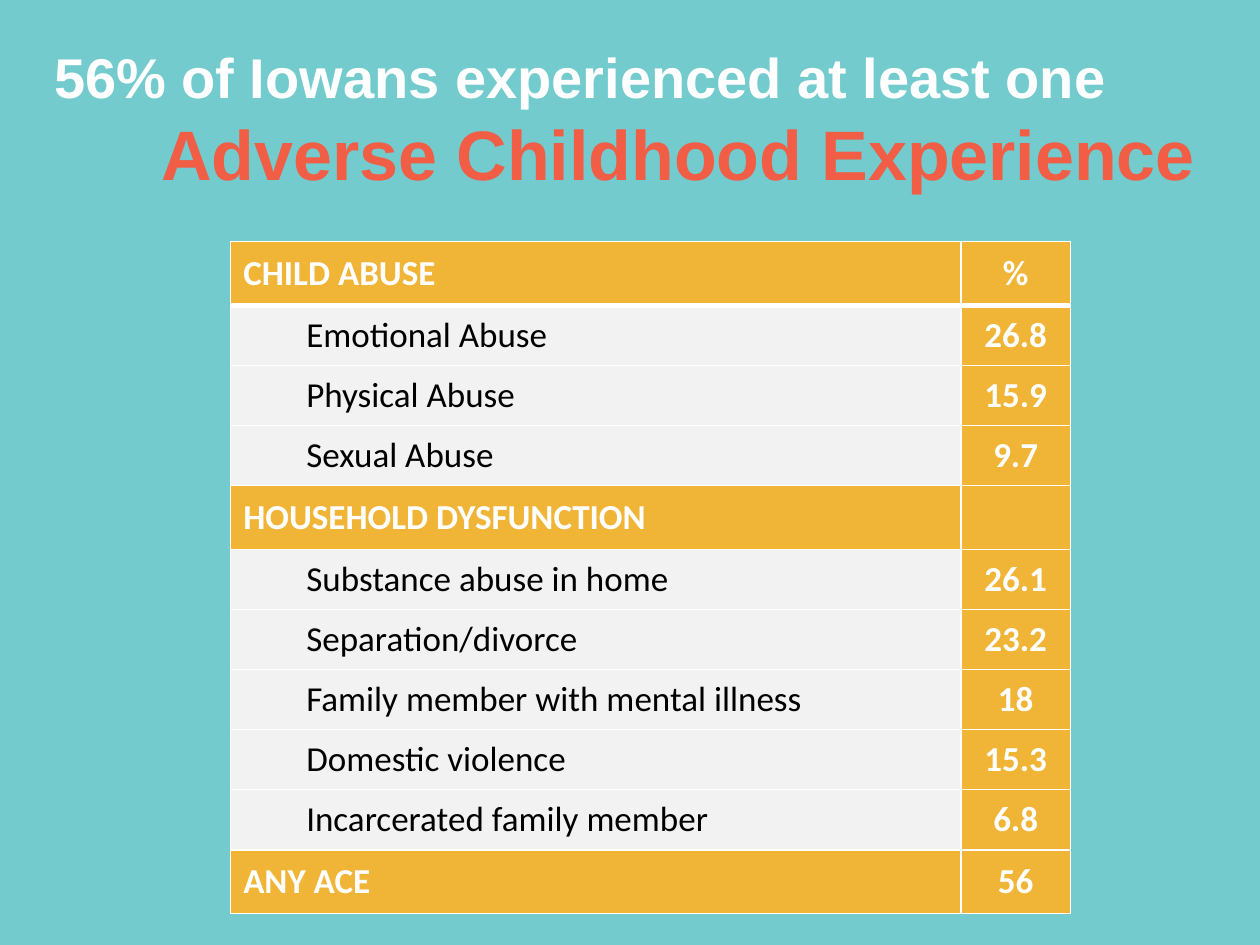
from lxml import etree
from pptx import Presentation
from pptx.dml.color import RGBColor
from pptx.enum.text import MSO_ANCHOR, MSO_AUTO_SIZE, PP_ALIGN
from pptx.oxml.ns import qn
from pptx.util import Cm, Pt

LEFT, CENTER, RIGHT = PP_ALIGN.LEFT, PP_ALIGN.CENTER, PP_ALIGN.RIGHT
MIDDLE = MSO_ANCHOR.MIDDLE

TEAL, CORAL, AMBER = "73CBCD", "F15D45", "F0B537"
WHITE, BLACK, PALE = "FFFFFF", "000000", "F2F2F2"

TITLE = [
    ("56% of Iowans experienced at least one", 32, WHITE, LEFT),
    ("Adverse Childhood Experience", 40, CORAL, RIGHT),
]

# Each group: heading, its value, and the experiences listed under it
GROUPS = [
    ("CHILD ABUSE", "%", [
        ("Emotional Abuse", "26.8"),
        ("Physical Abuse", "15.9"),
        ("Sexual Abuse", "9.7"),
    ]),
    ("HOUSEHOLD DYSFUNCTION", "", [
        ("Substance abuse in home", "26.1"),
        ("Separation/divorce", "23.2"),
        ("Family member with mental illness", "18"),
        ("Domestic violence", "15.3"),
        ("Incarcerated family member", "6.8"),
    ]),
    ("ANY ACE", "56", []),
]
COLUMN_WIDTHS = (14.72, 2.21)
HEADING_HEIGHT, ITEM_HEIGHT = 1.29, 1.21
ITEM_INDENT = 1.27


def color(value):
    return RGBColor.from_string(value)


def write(para, text, font="Calibri", size=20, ink=WHITE, bold=True, align=LEFT, indent=0):
    para.alignment = align
    if indent:
        para.level = 1
        properties = para._p.get_or_add_pPr()
        properties.set("marL", str(Cm(indent)))
        properties.set("indent", "0")
    if text:
        span = para.add_run()
        span.text = text
        style = span.font
    else:
        style = para.font
    style.name, style.size, style.bold = font, Pt(size), bold
    style.color.rgb = color(ink)


def add_borders(cell, bottom=1, top=1):
    properties = cell._tc.get_or_add_tcPr()
    for side, width in (("L", 1), ("R", 1), ("T", top), ("B", bottom)):
        line = etree.SubElement(properties, qn(f"a:ln{side}"), w=str(Pt(width)))
        fill = etree.SubElement(line, qn("a:solidFill"))
        etree.SubElement(fill, qn("a:srgbClr"), val=WHITE)


def add_title(page):
    box = page.shapes.add_textbox(Cm(0.84), Cm(0.74), Cm(23.5), Cm(3.33))
    frame = box.text_frame
    frame.word_wrap = True
    frame.auto_size = MSO_AUTO_SIZE.SHAPE_TO_FIT_TEXT
    for index, (text, size, ink, align) in enumerate(TITLE):
        para = frame.add_paragraph() if index else frame.paragraphs[0]
        write(para, text, font="Arial", size=size, ink=ink, align=align)


def add_rates_table(page):
    rows = []
    for heading, value, items in GROUPS:
        rows.append((heading, value, True))
        rows += [(label, rate, False) for label, rate in items]
    heights = [HEADING_HEIGHT if is_heading else ITEM_HEIGHT for *_, is_heading in rows]

    frame = page.shapes.add_table(len(rows), 2, Cm(4.65), Cm(4.87),
                                  Cm(sum(COLUMN_WIDTHS)), Cm(sum(heights)))
    table = frame.table
    for column, width in zip(table.columns, COLUMN_WIDTHS):
        column.width = Cm(width)

    for index, (label, value, is_heading) in enumerate(rows):
        table.rows[index].height = Cm(heights[index])
        label_style = {} if is_heading else {"ink": BLACK, "bold": False, "indent": ITEM_INDENT}
        cells = (
            (label, AMBER if is_heading else PALE, label_style),
            (value, AMBER, {"align": CENTER}),
        )
        for column, (text, fill, style) in enumerate(cells):
            cell = table.cell(index, column)
            cell.vertical_anchor = MIDDLE
            add_borders(cell, bottom=3 if index == 0 else 1, top=3 if index == 1 else 1)
            cell.fill.solid()
            cell.fill.fore_color.rgb = color(fill)
            write(cell.text_frame.paragraphs[0], text, **style)


def main():
    deck = Presentation()
    deck.slide_width, deck.slide_height = Cm(25.4), Cm(19.05)
    page = deck.slides.add_slide(deck.slide_layouts[6])
    page.background.fill.solid()
    page.background.fill.fore_color.rgb = color(TEAL)
    add_title(page)
    add_rates_table(page)
    deck.save("out.pptx")


if __name__ == "__main__":
    main()
